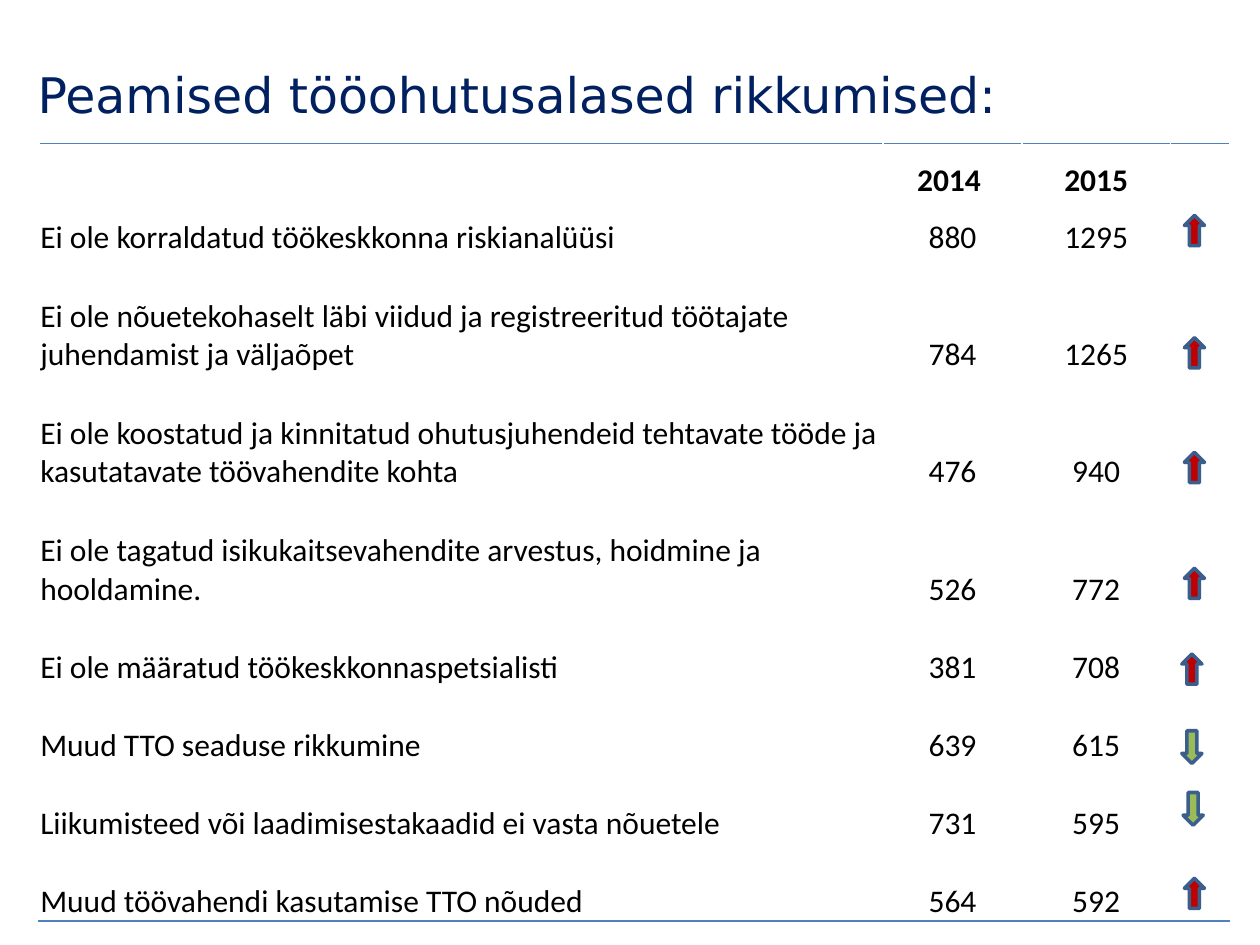
from dataclasses import dataclass

from lxml.etree import SubElement
from pptx import Presentation
from pptx.dml.color import RGBColor
from pptx.enum.shapes import MSO_SHAPE
from pptx.enum.text import MSO_ANCHOR, PP_ALIGN
from pptx.oxml import parse_xml
from pptx.oxml.ns import nsdecls, qn
from pptx.slide import Slide
from pptx.table import Table, _Cell
from pptx.util import Inches, Pt


@dataclass(frozen=True)
class Theme:
    title_font: str = "DejaVu Sans"
    body_font: str = "Calibri"
    title_size: int = 28
    body_size: int = 18
    title: str = "002060"
    text: str = "000000"
    rule: str = "4F81BD"
    arrow_line: str = "3A5F8C"
    worse: str = "C00000"
    better: str = "9BBB59"


@dataclass(frozen=True)
class Violation:
    label: str
    y2014: int
    y2015: int
    height: float
    arrow_left: float
    arrow_top: float


THEME = Theme()
HEADER_HEIGHT = 0.45
ONE_LINE, TWO_LINES = 0.62, 0.93
COLUMNS = (6.7, 1.1, 1.18, 0.47)
VIOLATIONS = (
    Violation("Ei ole korraldatud töökeskkonna riskianalüüsi", 880, 1295, HEADER_HEIGHT, 9.4, 1.71),
    Violation("Ei ole nõuetekohaselt läbi viidud ja registreeritud töötajate juhendamist ja väljaõpet",
              784, 1265, TWO_LINES, 9.4, 2.68),
    Violation("Ei ole koostatud ja kinnitatud ohutusjuhendeid tehtavate tööde ja kasutatavate "
              "töövahendite kohta", 476, 940, TWO_LINES, 9.4, 3.59),
    Violation("Ei ole tagatud isikukaitsevahendite arvestus, hoidmine ja hooldamine.",
              526, 772, TWO_LINES, 9.4, 4.51),
    Violation("Ei ole määratud töökeskkonnaspetsialisti", 381, 708, ONE_LINE, 9.38, 5.19),
    Violation("Muud TTO seaduse rikkumine", 639, 615, ONE_LINE, 9.38, 5.8),
    Violation("Liikumisteed või laadimisestakaadid ei vasta nõuetele", 731, 595, ONE_LINE, 9.39, 6.29),
    Violation("Muud töövahendi kasutamise TTO nõuded", 564, 592, ONE_LINE, 9.4, 6.97),
)


def add_title(s: Slide, text: str) -> None:
    tf = s.shapes.add_textbox(Inches(0.2), Inches(0.36), Inches(9.69), Inches(0.77)).text_frame
    tf.word_wrap = True
    tf.vertical_anchor = MSO_ANCHOR.MIDDLE
    p = tf.paragraphs[0]
    p.text = text
    p.font.name = THEME.title_font
    p.font.size = Pt(THEME.title_size)
    p.font.color.rgb = RGBColor.from_string(THEME.title)


def set_border(cell: _Cell, side: str) -> None:
    """Rule one side of a cell: "T" for top, "B" for bottom."""
    ln = parse_xml(f'<a:ln{side} {nsdecls("a")} w="{Pt(1)}"/>')
    fill = SubElement(ln, qn("a:solidFill"))
    SubElement(fill, qn("a:srgbClr"), val=THEME.rule)
    cell._tc.get_or_add_tcPr().insert(0, ln)


def fill_cell(cell: _Cell, text: str, centred: bool, bold: bool) -> None:
    cell.vertical_anchor = MSO_ANCHOR.BOTTOM
    cell.margin_left = cell.margin_right = cell.margin_top = Inches(0.01)
    cell.margin_bottom = 0
    p = cell.text_frame.paragraphs[0]
    p.text = text
    p.alignment = PP_ALIGN.CENTER if centred else PP_ALIGN.LEFT
    p.font.name = THEME.body_font
    p.font.size = Pt(THEME.body_size)
    p.font.bold = bold
    p.font.color.rgb = RGBColor.from_string(THEME.text)


def add_violation_table(s: Slide) -> Table:
    rows = [("", "2014 ", "2015", "")]
    rows += [(v.label, str(v.y2014), str(v.y2015), "") for v in VIOLATIONS]
    heights = [HEADER_HEIGHT] + [v.height for v in VIOLATIONS]
    table = s.shapes.add_table(len(rows), len(COLUMNS), Inches(0.31), Inches(1.14),
                               Inches(sum(COLUMNS)), Inches(sum(heights))).table
    table.first_row = table.horz_banding = False
    for column, width in zip(table.columns, COLUMNS):
        column.width = Inches(width)
    for i, (values, height) in enumerate(zip(rows, heights)):
        table.rows[i].height = Inches(height)
        for j, value in enumerate(values):
            cell = table.cell(i, j)
            cell.fill.background()
            if value:
                fill_cell(cell, value, centred=j > 0, bold=i == 0)
            if i == 0:
                set_border(cell, "T")
            elif i == len(rows) - 1:
                set_border(cell, "B")
    return table


def add_trend_arrow(s: Slide, v: Violation) -> None:
    """Point up in red where violations grew, down in green where they fell."""
    if v.y2015 > v.y2014:
        kind, height, colour = MSO_SHAPE.UP_ARROW, 0.24, THEME.worse
    else:
        kind, height, colour = MSO_SHAPE.DOWN_ARROW, 0.26, THEME.better
    sp = s.shapes.add_shape(kind, Inches(v.arrow_left), Inches(v.arrow_top), Inches(0.16), Inches(height))
    sp.shadow.inherit = False
    sp.fill.solid()
    sp.fill.fore_color.rgb = RGBColor.from_string(colour)
    sp.line.color.rgb = RGBColor.from_string(THEME.arrow_line)
    sp.line.width = Pt(2)


def main() -> None:
    prs = Presentation()
    prs.slide_width, prs.slide_height = Inches(10), Inches(7.5)
    s = prs.slides.add_slide(prs.slide_layouts[6])
    add_title(s, "Peamised tööohutusalased rikkumised:")
    add_violation_table(s)
    for violation in VIOLATIONS:
        add_trend_arrow(s, violation)
    prs.save("out.pptx")


if __name__ == "__main__":
    main()
